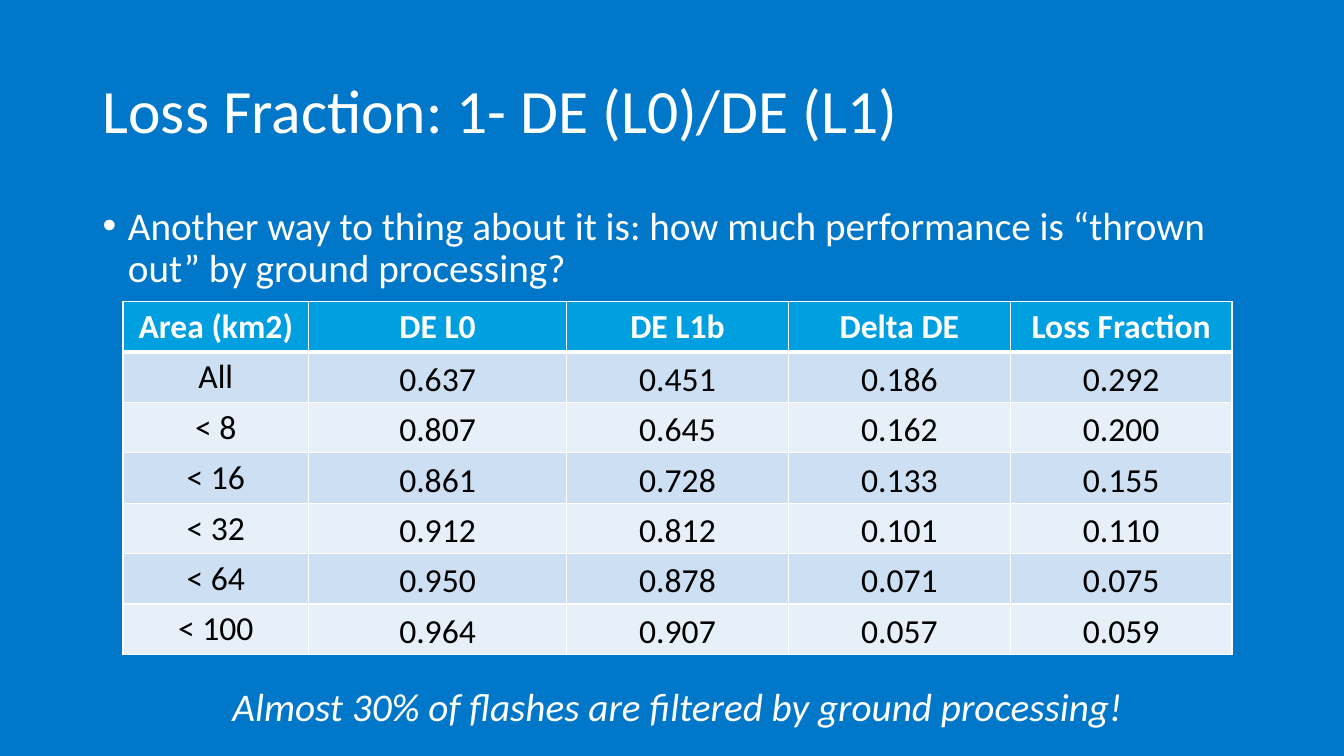
from dataclasses import dataclass

from lxml.etree import SubElement
from pptx import Presentation
from pptx.dml.color import RGBColor
from pptx.enum.text import MSO_ANCHOR, PP_ALIGN
from pptx.oxml.ns import qn
from pptx.util import Inches, Pt


@dataclass(frozen=True)
class Theme:
    font: str = "Calibri"
    back: str = "0077C8"
    light: str = "FFFFFF"
    dark: str = "000000"
    head: str = "009FDF"
    bands: tuple = ("CCDFF3", "E7F0F9")
    title: int = 44
    body: int = 28
    cell: int = 24


def assign(item, values):
    for name, value in values.items():
        setattr(item, name, value)


class Deck:
    def __init__(self, theme):
        self.theme = theme
        self.file = Presentation()
        assign(self.file, {"slide_width": Inches(13.33), "slide_height": Inches(7.5)})
        self.slide = self.file.slides.add_slide(self.file.slide_layouts[6])
        self.paint(self.slide.background.fill, theme.back)

    def paint(self, fill, color):
        fill.solid()
        fill.fore_color.rgb = RGBColor.from_string(color)

    def label(self, para, text, size, color, form=None, **marks):
        assign(para, form or {})
        run = para.add_run()
        run.text = text
        assign(run.font, {"name": self.theme.font, "size": Pt(size), **marks})
        run.font.color.rgb = RGBColor.from_string(color)

    def text(self, area, text, size, anchor=MSO_ANCHOR.TOP, form=None, **marks):
        frame = self.slide.shapes.add_textbox(*map(Inches, area)).text_frame
        assign(frame, {"word_wrap": True, "vertical_anchor": anchor})
        para = frame.paragraphs[0]
        self.label(para, text, size, self.theme.light, form, **marks)
        return para

    def bullet(self, area, text, size, form):
        props = self.text(area, text, size, form=form)._p.get_or_add_pPr()
        props.set("marL", str(Inches(0.25)))
        props.set("indent", str(Inches(-0.25)))
        SubElement(props, qn("a:buFont"), typeface="Arial")
        SubElement(props, qn("a:buChar"), char="•")

    def border(self, cell, widths):
        props = cell._tc.get_or_add_tcPr()
        for place, (side, width) in enumerate(widths.items()):
            line = SubElement(props, qn(f"a:ln{side}"), w=str(Pt(width)))
            fill = SubElement(line, qn("a:solidFill"))
            SubElement(fill, qn("a:srgbClr"), val=self.theme.light)
            props.insert(place, line)

    def table(self, area, widths, rows):
        theme = self.theme
        shape = self.slide.shapes.add_table(len(rows), len(widths), *map(Inches, area))
        grid = shape.table
        for col, width in zip(grid.columns, widths):
            col.width = Inches(width)
        inset = {f"margin_{side}": Inches(0.03) for side in ("left", "right")}
        inset.update({f"margin_{side}": Inches(0.02) for side in ("top", "bottom")})
        inset["vertical_anchor"] = MSO_ANCHOR.BOTTOM
        for r, row in enumerate(rows):
            head = r == 0
            shade = theme.head if head else theme.bands[(r - 1) % 2]
            color = theme.light if head else theme.dark
            for c, value in enumerate(row):
                cell = grid.cell(r, c)
                self.paint(cell.fill, shade)
                if r and c:
                    assign(cell, inset)
                self.label(cell.text_frame.paragraphs[0], value, theme.cell, color,
                           {"alignment": PP_ALIGN.CENTER}, bold=head)
                self.border(cell, {"L": 1, "R": 1, "T": 3 if r == 1 else 1,
                                   "B": 3 if head else 1})


def main():
    theme = Theme()
    deck = Deck(theme)
    deck.text((0.92, 0.4, 11.5, 1.45), "Loss Fraction: 1- DE (L0)/DE (L1)",
              theme.title, MSO_ANCHOR.MIDDLE, {"line_spacing": 0.9})
    deck.bullet((0.92, 2, 11.29, 1.15),
                "Another way to thing about it is: how much performance is “thrown out” "
                "by ground processing?",
                theme.body, {"line_spacing": 0.9, "space_before": Pt(10)})
    rows = [
        ("Area (km2)", "DE L0", "DE L1b", "Delta DE", "Loss Fraction"),
        ("All", "0.637", "0.451", "0.186", "0.292"),
        ("< 8", "0.807", "0.645", "0.162", "0.200"),
        ("< 16", "0.861", "0.728", "0.133", "0.155"),
        ("< 32", "0.912", "0.812", "0.101", "0.110"),
        ("< 64", "0.950", "0.878", "0.071", "0.075"),
        ("< 100", "0.964", "0.907", "0.057", "0.059"),
    ]
    deck.table((1.22, 2.99, 11, 3.5), (1.84, 2.56, 2.2, 2.2, 2.2), rows)
    deck.text((1.22, 6.72, 10.99, 0.57),
              "Almost 30% of flashes are filtered by ground processing!",
              theme.body, form={"alignment": PP_ALIGN.CENTER}, italic=True)
    deck.file.save("out.pptx")


if __name__ == "__main__":
    main()
